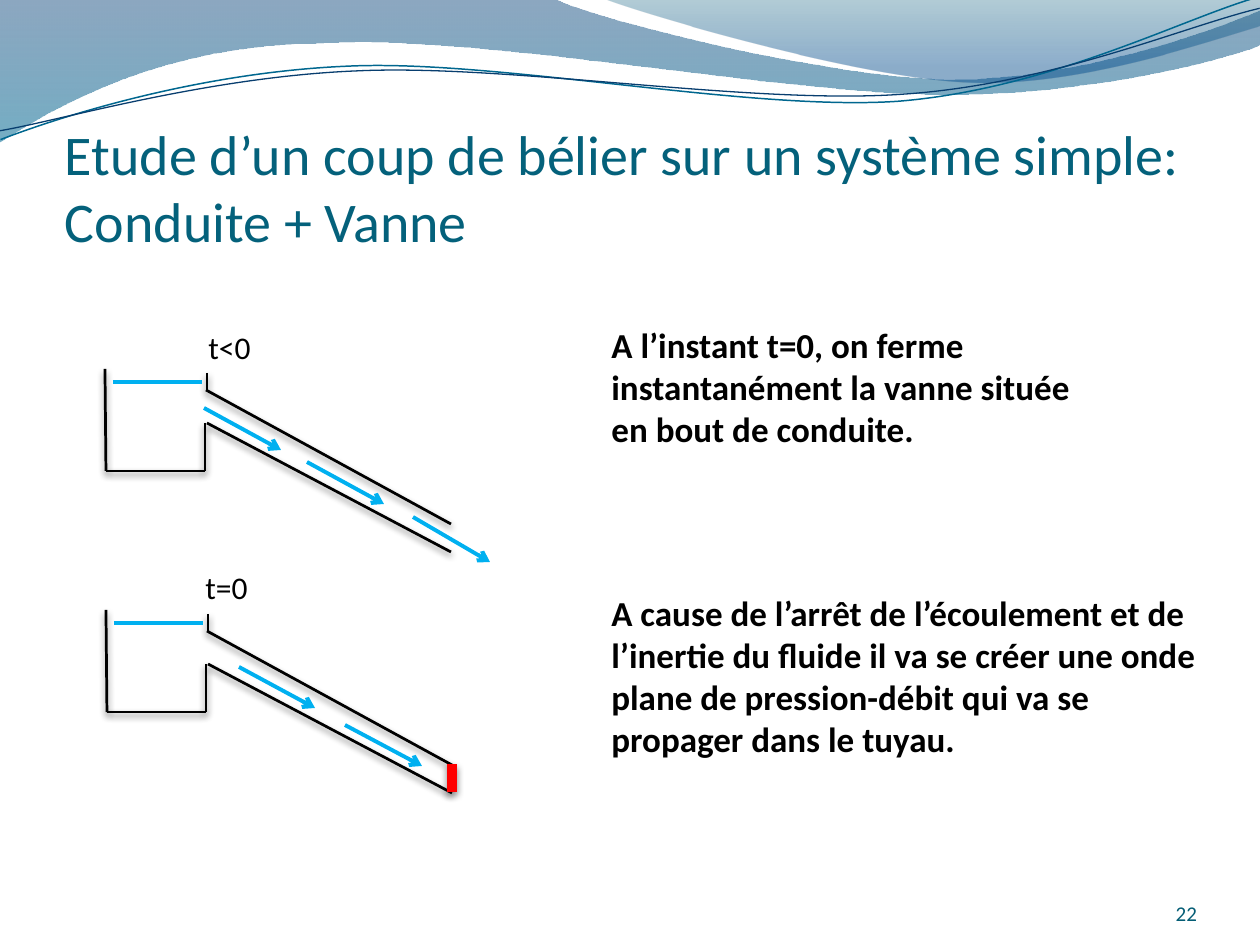
from dataclasses import dataclass

from lxml import etree
from pptx import Presentation
from pptx.dml.color import RGBColor
from pptx.enum.shapes import MSO_CONNECTOR
from pptx.enum.text import MSO_ANCHOR, MSO_AUTO_SIZE, PP_ALIGN
from pptx.oxml.ns import qn
from pptx.util import Pt

PX = 914400 / 126
STRAIGHT = MSO_CONNECTOR.STRAIGHT
BOTTOM, TOP = MSO_ANCHOR.BOTTOM, MSO_ANCHOR.TOP
LEFT, RIGHT = PP_ALIGN.LEFT, PP_ALIGN.RIGHT
FIXED, GROW = MSO_AUTO_SIZE.NONE, MSO_AUTO_SIZE.SHAPE_TO_FIT_TEXT
FONT = "Calibri"
BLACK, BLUE, RED = "000000", "00B0F0", "FF0000"
TILT = 357.3


@dataclass
class Wave:
    """A path: pairs are straight segments, sixes are Bezier segments."""
    segs: list[tuple[int, ...]]
    stops: tuple[tuple[int, str, int], ...] = ()
    line: str = ""
    width: float = 0


@dataclass
class Stroke:
    ends: tuple[int, int, int, int]
    color: str = BLACK
    width: float = 1.57
    shadow: bool = True
    arrow: bool = False


@dataclass
class Note:
    text: str
    box: tuple[int, int, int, int]
    size: int = 20
    color: str = BLACK
    bold: bool = False


@dataclass
class Scene:
    label: Note
    left: int
    top: int
    flow: list[tuple[int, int, int, int]]
    shut: bool = False


BANDS = [
    Wave([(0, -1), (554, -1), (600, 21, 837, 79, 955, 79),
          (1075, 79, 1207, 33, 1260, 11), (1261, 45),
          (1239, 55, 1096, 96, 940, 94), (784, 94, 481, 35, 324, 43),
          (163, 44, 58, 105, -1, 142)],
         ((0, "003E76", 45), (100, "006A93", 55))),
    Wave([(604, -1), (641, 14, 859, 78, 969, 82),
          (1079, 87, 1211, 40, 1260, 26), (1260, 0)],
         ((0, "005778", 30), (80, "004A8C", 45))),
]
CURVES = [
    Wave([(-2, 110), (58, 90, 199, 52, 349, 53),
          (498, 53, 745, 117, 896, 114), (1048, 109, 1184, 45, 1260, 27)],
         line="00678F", width=0.85),
    Wave([(-2, 101), (57, 94, 207, 57, 357, 58),
          (509, 58, 750, 111, 902, 107), (1052, 104, 1187, 52, 1262, 38)],
         line="083E6F", width=0.75),
]
# Tank and pipe, measured from the top of the tank's left wall
TANK = [(-1, 0, 0, 102), (0, 102, 99, 102), (99, 54, 99, 102),
        (101, 54, 345, 183), (100, 21, 345, 155), (101, 4, 101, 21)]
WATER = (7, 13, 96, 13)
VALVE = (345, 154, 345, 182)
SCENES = [
    Scene(Note("t<0", (196, 322, 120, 50), 18), 106, 369,
          [(98, 39, 175, 81), (201, 93, 278, 135), (307, 148, 384, 193)]),
    Scene(Note("t=0", (193, 562, 120, 50), 18), 107, 610,
          [(238, 115, 315, 156), (132, 57, 208, 98)], True),
]
CLOSE = Note("A l’instant t=0, on ferme instantanément la vanne située "
             "en bout de conduite.", (599, 317, 486, 140), bold=True)
CAUSE = Note("A cause de l’arrêt de l’écoulement et de l’inertie du fluide il "
             "va se créer une onde plane de pression-débit qui va se propager "
             "dans le tuyau.", (599, 585, 615, 224), bold=True)
TITLE = Note("Etude d’un coup de bélier sur un système simple: "
             "Conduite + Vanne", (65, 116, 1134, 138), 32, "04617B")
NUMBER = Note("22", (1092, 876, 105, 50), 12, "045D75")


def emu(px: float) -> int:
    return round(px * PX)


def rgb(code: str) -> RGBColor:
    return RGBColor.from_string(code)


def bend(shape, segs: list[tuple[int, ...]]) -> None:
    """Turn the straight segments that stand for Beziers into curves."""
    for node, seg in zip(list(shape.element.iter(qn("a:lnTo"))), segs[1:]):
        if len(seg) == 2:
            continue
        curve = etree.Element(qn("a:cubicBezTo"))
        for x, y in zip(seg[::2], seg[1::2]):
            etree.SubElement(curve, qn("a:pt"), x=str(emu(x) - shape.left),
                             y=str(emu(y) - shape.top))
        node.getparent().replace(node, curve)


def draw_wave(shapes, wave: Wave):
    pts = [(emu(seg[-2]), emu(seg[-1])) for seg in wave.segs]
    pen = shapes.build_freeform(*pts[0])
    pen.add_line_segments(pts[1:], close=bool(wave.stops))
    shape = pen.convert_to_shape()
    bend(shape, wave.segs)
    shape.shadow.inherit = False
    return shape


def draw_band(shapes, wave: Wave) -> None:
    shape = draw_wave(shapes, wave)
    shape.line.fill.background()
    shape.fill.gradient()
    shape.fill.gradient_angle = 270
    for stop, (pos, code, alpha) in zip(shape.fill.gradient_stops, wave.stops):
        stop.position = pos / 100
        stop.color.rgb = rgb(code)
    colors = shape.element.spPr.iter(qn("a:srgbClr"))
    for node, (pos, code, alpha) in zip(colors, wave.stops):
        etree.SubElement(node, qn("a:alpha"), val=str(alpha * 1000))


def draw_curve(shapes, wave: Wave) -> None:
    shape = draw_wave(shapes, wave)
    shape.rotation = TILT
    shape.fill.background()
    shape.line.color.rgb = rgb(wave.line)
    shape.line.width = Pt(wave.width)


def draw_line(shapes, stroke: Stroke, left: int, top: int) -> None:
    x1, y1, x2, y2 = stroke.ends
    link = shapes.add_connector(STRAIGHT, emu(left + x1), emu(top + y1),
                                emu(left + x2), emu(top + y2))
    link.line.color.rgb = rgb(stroke.color)
    link.line.width = Pt(stroke.width)
    props = link.element.spPr
    if stroke.arrow:
        etree.SubElement(props.find(qn("a:ln")), qn("a:tailEnd"), type="arrow")
    effects = etree.SubElement(props, qn("a:effectLst"))
    if stroke.shadow:
        cast = etree.SubElement(effects, qn("a:outerShdw"), blurRad=str(Pt(4)),
                                dist=str(Pt(2)), dir="5400000", rotWithShape="0")
        tint = etree.SubElement(cast, qn("a:srgbClr"), val=BLACK)
        etree.SubElement(tint, qn("a:alpha"), val="45000")


def write(shape, note: Note, anchor=TOP, align=LEFT) -> None:
    shape.left, shape.top, shape.width, shape.height = map(emu, note.box)
    frame = shape.text_frame
    frame.text = note.text
    frame.word_wrap = True
    frame.auto_size = GROW if anchor == TOP else FIXED
    frame.vertical_anchor = anchor
    if anchor == BOTTOM:
        frame.margin_left = frame.margin_right = frame.margin_bottom = 0
    para = frame.paragraphs[0]
    para.alignment = align
    para.font.name = FONT
    para.font.size = Pt(note.size)
    para.font.bold = note.bold
    para.font.color.rgb = rgb(note.color)


def add_note(shapes, note: Note, anchor=TOP, align=LEFT) -> None:
    write(shapes.add_textbox(0, 0, 0, 0), note, anchor, align)


def draw_scene(shapes, scene: Scene) -> None:
    group = shapes.add_group_shape().shapes
    strokes = [Stroke(ends) for ends in TANK]
    if scene.shut:
        strokes.append(Stroke(VALVE, RED, 6))
    strokes += [Stroke(ends, BLUE, 2.25, False, True) for ends in scene.flow]
    strokes.append(Stroke(WATER, BLUE, 2.25, False))
    for stroke in strokes:
        draw_line(group, stroke, scene.left, scene.top)
    add_note(group, scene.label)


def main() -> None:
    deck = Presentation()
    deck.slide_width, deck.slide_height = emu(1260), emu(945)
    shapes = deck.slides.add_slide(deck.slide_layouts[5]).shapes
    for wave in BANDS:
        draw_band(shapes, wave)
    group = shapes.add_group_shape().shapes
    for wave in CURVES:
        draw_curve(group, wave)
    title = shapes.title
    title.element.getparent().append(title.element)
    write(title, TITLE, BOTTOM)
    add_note(shapes, NUMBER, BOTTOM, RIGHT)
    add_note(shapes, CLOSE)
    for scene in SCENES:
        draw_scene(shapes, scene)
    add_note(shapes, CAUSE)
    deck.save("out.pptx")


if __name__ == "__main__":
    main()
